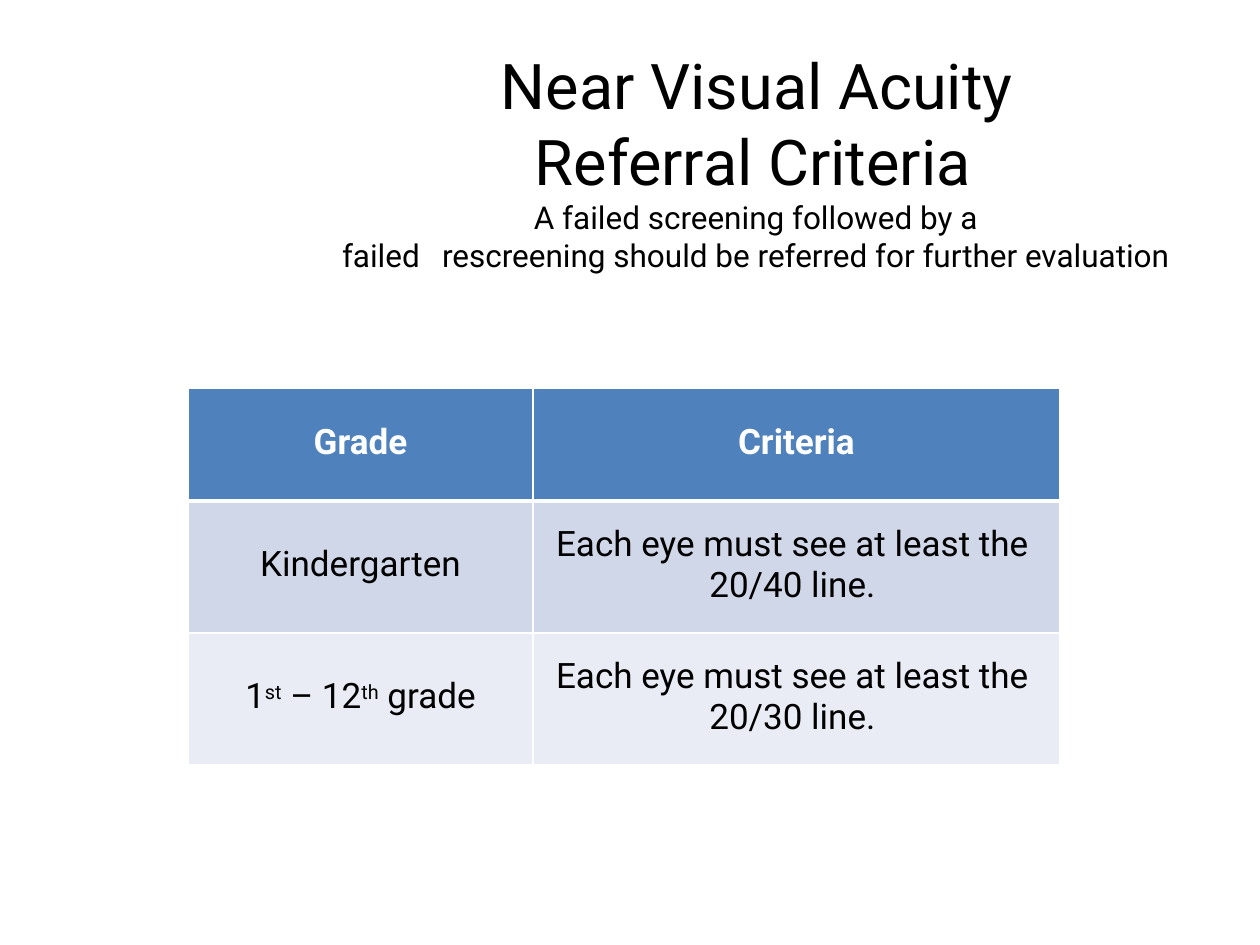
import pptx
import pptx.dml.color
import pptx.enum.text
import pptx.oxml
import pptx.oxml.ns
import pptx.util

PX = 914400 // 126
FONT = "Roboto"
BLACK, WHITE = "000000", "FFFFFF"
CENTER = pptx.enum.text.PP_ALIGN.CENTER
MIDDLE = pptx.enum.text.MSO_ANCHOR.MIDDLE

COLUMNS = [345, 527]
ROWS = [113, 132, 132]
FILLS = ["4F81BC", "D0D7E8", "E9ECF4"]
# A cell is a list of (text, raised) runs.
CELLS = [
    [[("Grade", False)], [("Criteria", False)]],
    [[("Kindergarten", False)],
     [("Each eye must see at least the 20/40 line.", False)]],
    [[("1", False), ("st", True), (" – 12", False), ("th", True), (" grade", False)],
     [("Each eye must see at least the 20/30 line.", False)]],
]


def px(n):
    return pptx.util.Emu(n * PX)


def rgb(value):
    return pptx.dml.color.RGBColor.from_string(value)


def add_run(p, text, size, color=BLACK, bold=False, raised=False):
    r = p.add_run()
    r.text = text
    r.font.name = FONT
    r.font.size = pptx.util.Pt(size)
    r.font.bold = bold
    r.font.color.rgb = rgb(color)
    if raised:
        r.font._element.set("baseline", "26000")


def set_margins(box, left=0, top=0, right=0, bottom=0):
    box.margin_left, box.margin_top = px(left), px(top)
    box.margin_right, box.margin_bottom = px(right), px(bottom)


def add_text_frame(s, x, y, w, h):
    tf = s.shapes.add_textbox(px(x), px(y), px(w), px(h)).text_frame
    tf.word_wrap = True
    set_margins(tf, top=1)
    return tf


def add_title(s):
    p = add_text_frame(s, 500, 46, 530, 155).paragraphs[0]
    pPr = p._p.get_or_add_pPr()
    pPr.set("marL", str(px(35)))
    pPr.set("indent", str(px(-34)))
    add_run(p, "Near Visual Acuity Referral Criteria", 36)


def add_subtitle(s):
    tf = add_text_frame(s, 328, 197, 856, 79)
    first, second = tf.paragraphs[0], tf.add_paragraph()
    tabs = pptx.oxml.parse_xml(
        f'<a:tabLst {pptx.oxml.ns.nsdecls("a")}><a:tab pos="{px(100)}" algn="l"/></a:tabLst>')
    second._p.get_or_add_pPr().append(tabs)
    first.alignment = second.alignment = CENTER
    add_run(first, "A failed screening followed by a", 18)
    add_run(second, "failed\trescreening should be referred for further evaluation", 18)


def set_borders(cell, top, bottom):
    """Draw white cell borders; top and bottom widths are in points."""
    tcPr = cell._tc.get_or_add_tcPr()
    widths = {"lnL": 1, "lnR": 1, "lnT": top, "lnB": bottom}
    for i, (tag, width) in enumerate(widths.items()):
        tcPr.insert(i, pptx.oxml.parse_xml(
            f'<a:{tag} {pptx.oxml.ns.nsdecls("a")} w="{pptx.util.Pt(width)}">'
            f'<a:solidFill><a:srgbClr val="{WHITE}"/></a:solidFill></a:{tag}>'))


def fill_cell(cell, runs, row, col):
    header = row == 0
    cell.fill.solid()
    cell.fill.fore_color.rgb = rgb(FILLS[row])
    cell.vertical_anchor = MIDDLE
    set_margins(cell, right=8 if col and not header else 0, bottom=4)
    set_borders(cell, top=3 if row == 1 else 1, bottom=3 if header else 1)
    p = cell.text_frame.paragraphs[0]
    p.alignment = CENTER
    for text, raised in runs:
        add_run(p, text, 19.5 if raised else 20, WHITE if header else BLACK, header, raised)


def add_criteria_table(s):
    table = s.shapes.add_table(len(ROWS), len(COLUMNS), px(188), px(388),
                               px(sum(COLUMNS)), px(sum(ROWS))).table
    for column, width in zip(table.columns, COLUMNS):
        column.width = px(width)
    for row, height in zip(table.rows, ROWS):
        row.height = px(height)
    for i, cells in enumerate(CELLS):
        for j, runs in enumerate(cells):
            fill_cell(table.cell(i, j), runs, i, j)


def main():
    prs = pptx.Presentation()
    prs.slide_width, prs.slide_height = px(1260), px(945)
    s = prs.slides.add_slide(prs.slide_layouts[6])
    add_title(s)
    add_subtitle(s)
    add_criteria_table(s)
    prs.save("out.pptx")


if __name__ == "__main__":
    main()
